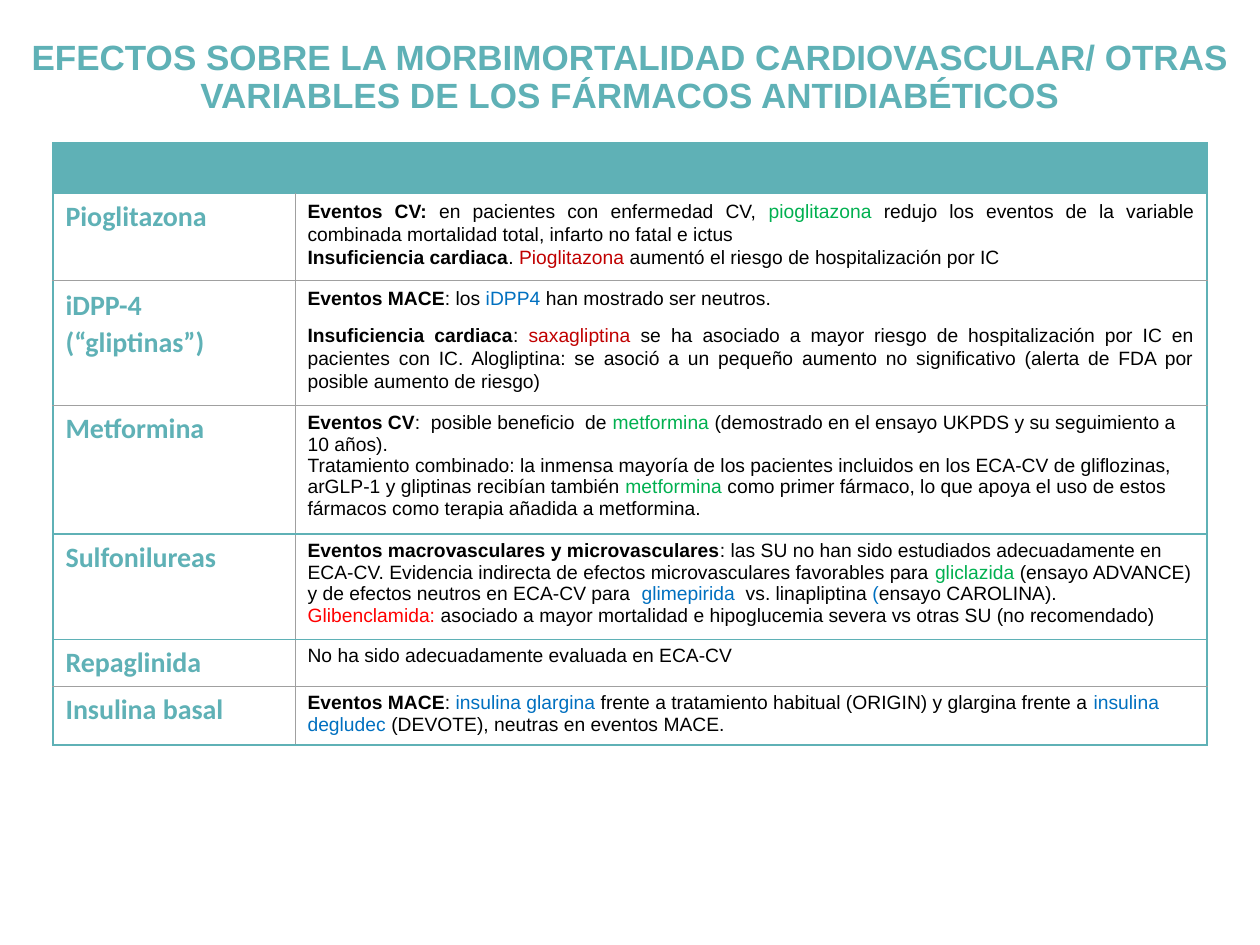
from lxml import etree
from pptx import Presentation
from pptx import util as u
from pptx.dml.color import RGBColor
from pptx.enum import text
from pptx.oxml import ns

PX = 914400 // 126
TEAL, GRAY, BLACK = "5FB1B6", "A0A0A0", "000000"
GREEN, BLUE, DARK_RED, RED = "00B050", "0070C0", "C00000", "FF0000"
BOLD = "bold"
JUSTIFY = text.PP_ALIGN.JUSTIFY


def add_run(p, words, size, font, color, bold):
    r = p.add_run()
    r.text = words
    for name, value in {"size": u.Pt(size), "name": font, "bold": bold}.items():
        setattr(r.font, name, value)
    r.font.color.rgb = RGBColor.from_string(color)


def add_border(cell, side, color, width):
    ln = etree.SubElement(cell._tc.get_or_add_tcPr(), ns.qn("a:ln" + side), w=str(u.Pt(width)))
    fill = etree.SubElement(ln, ns.qn("a:solidFill"))
    etree.SubElement(fill, ns.qn("a:srgbClr"), val=color)


prs = Presentation()
prs.slide_width, prs.slide_height = u.Inches(10), u.Inches(7.5)
s = prs.slides.add_slide(prs.slide_layouts[6])

# Title
tf = s.shapes.add_textbox(0, 29 * PX, 1260 * PX, 115 * PX).text_frame
for name, value in {"word_wrap": True, "vertical_anchor": text.MSO_ANCHOR.BOTTOM,
                    "margin_bottom": 28 * PX}.items():
    setattr(tf, name, value)
p = tf.paragraphs[0]
p.alignment, p.line_spacing = text.PP_ALIGN.CENTER, 0.9
add_run(p, "EFECTOS SOBRE LA MORBIMORTALIDAD CARDIOVASCULAR/ OTRAS VARIABLES "
        "DE LOS FÁRMACOS ANTIDIABÉTICOS", 20, "Arial", TEAL, True)

# Drug, paragraph format of the name, paragraph format of the evidence, evidence runs
TIGHT = {"alignment": JUSTIFY, "line_spacing": 1.07}
SPACED = {**TIGHT, "space_after": u.Pt(8)}
drugs = [
    ("Pioglitazona", {}, TIGHT, [
        [("Eventos CV: ", BOLD), ("en pacientes con enfermedad CV, ", BLACK),
         ("pioglitazona", GREEN),
         (" redujo los eventos de la variable combinada mortalidad total, "
          "infarto no fatal e ictus", BLACK)],
        [("Insuficiencia cardiaca", BOLD), (". ", BLACK), ("Pioglitazona", DARK_RED),
         (" aumentó el riesgo de hospitalización por IC", BLACK)]]),
    ("iDPP-4 (“gliptinas”)", SPACED, SPACED, [
        [("Eventos MACE", BOLD), (": los ", BLACK), ("iDPP4", BLUE),
         (" han mostrado ser neutros.", BLACK)],
        [("Insuficiencia cardiaca", BOLD), (": ", BLACK), ("saxagliptina", DARK_RED),
         (" se ha asociado a mayor riesgo de hospitalización por IC en pacientes con IC. "
          "Alogliptina: se asoció a un pequeño aumento no significativo "
          "(alerta de FDA por posible aumento de riesgo)", BLACK)]]),
    ("Metformina", {}, {}, [
        [("Eventos CV", BOLD), (":  posible beneficio  de ", BLACK), ("metformina ", GREEN),
         ("(demostrado en el ensayo UKPDS y su seguimiento a 10 años).", BLACK)],
        [("Tratamiento combinado: la inmensa mayoría de los pacientes incluidos en los "
          "ECA-CV de gliflozinas, arGLP-1 y gliptinas recibían también ", BLACK),
         ("metformina", GREEN),
         (" como primer fármaco, lo que apoya el uso de estos fármacos como terapia "
          "añadida a metformina.", BLACK)]]),
    ("Sulfonilureas", {}, {}, [
        [("Eventos macrovasculares y microvasculares", BOLD),
         (": las SU no han sido estudiados adecuadamente en ECA-CV. Evidencia indirecta de "
          "efectos microvasculares favorables para ", BLACK), ("gliclazida ", GREEN),
         ("(ensayo ADVANCE) y de efectos neutros en ECA-CV para  ", BLACK),
         ("glimepirida  ", BLUE), ("vs. linapliptina ", BLACK), ("(", BLUE),
         ("ensayo CAROLINA).", BLACK)],
        [("Glibenclamida:", RED),
         (" asociado a mayor mortalidad e hipoglucemia severa vs otras SU "
          "(no recomendado)", BLACK)]]),
    ("Repaglinida", {}, {}, [[("No ha sido adecuadamente evaluada en ECA-CV", BLACK)]]),
    ("Insulina basal", {}, {}, [
        [("Eventos MACE", BOLD), (": ", BLACK), ("insulina glargina ", BLUE),
         ("frente a tratamiento habitual (ORIGIN) y glargina frente a ", BLACK),
         ("insulina degludec ", BLUE), ("(DEVOTE), neutras en eventos MACE.", BLACK)]]),
]

# Table grid
heights = [50, 87, 118, 126, 99, 47, 55]
widths = [242, 912]
table = s.shapes.add_table(len(heights), len(widths), 53 * PX, 143 * PX,
                           sum(widths) * PX, sum(heights) * PX).table
table.first_row = table.horz_banding = False
for row, height in zip(table.rows, heights):
    row.height = height * PX
for column, width in zip(table.columns, widths):
    column.width = width * PX

# Borders: one horizontal rule above each row and one below the last
OUTER, INNER = (TEAL, 1), (GRAY, 0.5)
rules = [OUTER, OUTER, INNER, INNER, OUTER, (TEAL, 0.75), INNER, OUTER]
for i in range(len(heights)):
    middle = INNER if i else OUTER
    for j, (left, right) in enumerate([(OUTER, middle), (middle, OUTER)]):
        cell = table.cell(i, j)
        for side, rule in zip("LRTB", (left, right, rules[i], rules[i + 1])):
            add_border(cell, side, *rule)
        if i == 0:
            cell.fill.solid()
            cell.fill.fore_color.rgb = RGBColor.from_string(TEAL)
        else:
            cell.fill.background()

# Cell text
for i, (drug, name_format, evidence_format, evidence) in enumerate(drugs, 1):
    columns = [(name_format, 16, "Calibri", [[(drug, TEAL)]]),
               (evidence_format, 11, "Arial", evidence)]
    for j, (formats, size, font, paragraphs) in enumerate(columns):
        tf = table.cell(i, j).text_frame
        for k, runs in enumerate(paragraphs):
            p = tf.add_paragraph() if k else tf.paragraphs[0]
            for name, value in formats.items():
                setattr(p, name, value)
            for words, style in runs:
                color = BLACK if style == BOLD else style
                add_run(p, words, size, font, color, j == 0 or style == BOLD)

prs.save("out.pptx")
